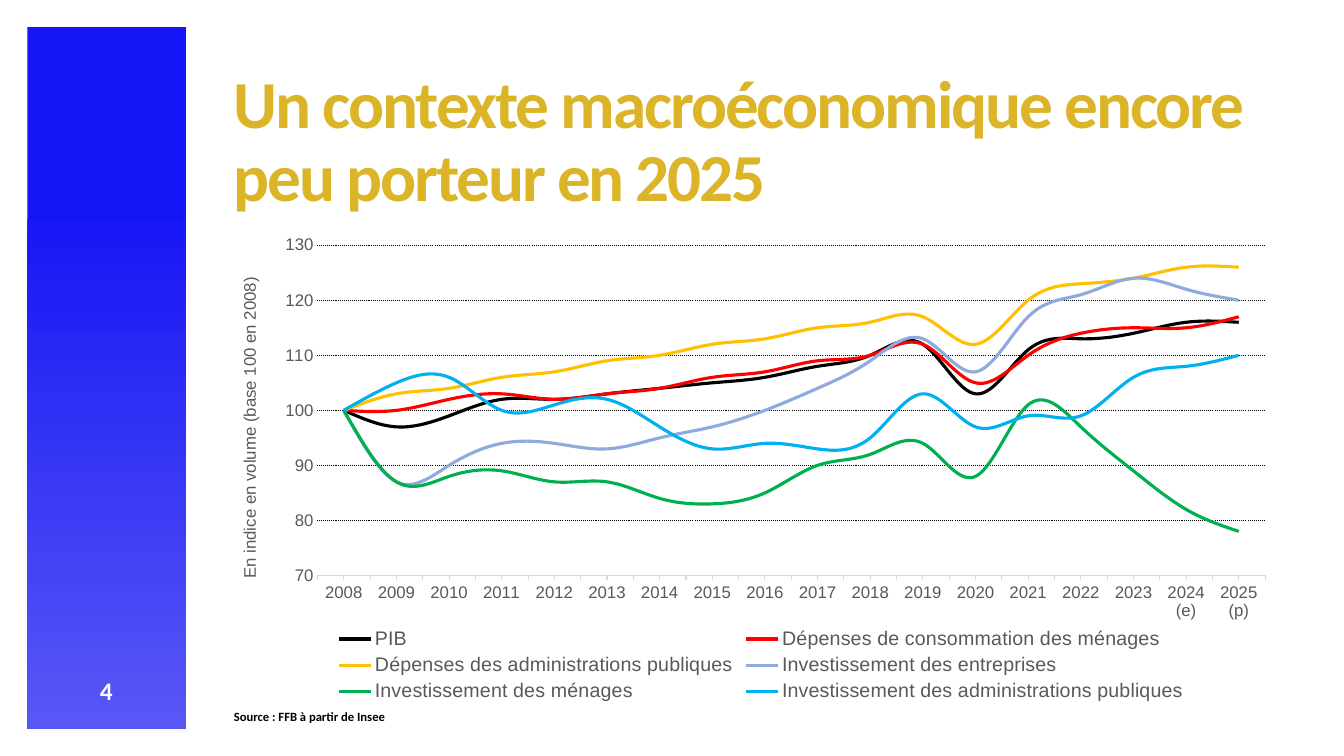
from pptx import Presentation
from pptx.chart.data import CategoryChartData
from pptx.dml.color import RGBColor
from pptx.enum.chart import XL_CHART_TYPE as CT, XL_LEGEND_POSITION as LP, XL_TICK_MARK as TM
from pptx.enum.dml import MSO_LINE
from pptx.enum.shapes import MSO_SHAPE
from pptx.enum.text import MSO_ANCHOR, PP_ALIGN
from pptx.oxml import parse_xml
from pptx.oxml.ns import nsdecls
from pptx.util import Pt

GREY = "595959"


def rgb(value):
    return RGBColor.from_string(value)


def set_font(font, size, color, name="Arial", bold=False):
    fmt = {"size": Pt(size), "name": name, "bold": bold}
    for key, value in fmt.items():
        setattr(font, key, value)
    font.color.rgb = rgb(color)


prs = Presentation()
prs.slide_width, prs.slide_height = Pt(960), Pt(540)
s = prs.slides.add_slide(prs.slide_layouts[6])

# Gradient side band
band = s.shapes.add_shape(MSO_SHAPE.RECTANGLE, Pt(19.5), Pt(19.5), Pt(113.5), Pt(501))
band.shadow.inherit = False
band.line.fill.background()
band.fill.gradient()
band.fill.gradient_angle = 270
for stop, (pos, color) in zip(band.fill.gradient_stops, [(0.25, "1615F5"), (1, "5757F5")]):
    stop.position = pos
    stop.color.rgb = rgb(color)

# Page number, title and source: text, box, size, colour, alignment, anchor, tracking
texts = [
    ("4", (19.5, 480, 113, 29), 18, "FFFFFF", PP_ALIGN.CENTER, MSO_ANCHOR.MIDDLE, 0),
    ("Un contexte macroéconomique encore peu porteur en 2025",
     (160, 47, 767.5, 60), 48, "DBB428", PP_ALIGN.LEFT, MSO_ANCHOR.TOP, -150),
    ("Source : FFB à partir de Insee",
     (160, 504, 646.5, 17.5), 9, "000000", PP_ALIGN.LEFT, MSO_ANCHOR.TOP, 0),
]
for text, box, size, color, align, anchor, tracking in texts:
    tf = s.shapes.add_textbox(*[Pt(v) for v in box]).text_frame
    tf.word_wrap = True
    tf.vertical_anchor = anchor
    p = tf.paragraphs[0]
    p.alignment = align
    p.line_spacing = 0.9
    r = p.add_run()
    r.text = text
    set_font(r.font, size, color, "Calibri", True)
    if tracking:
        r._r.get_or_add_rPr().set("spc", str(tracking))

# Chart data
series = [
    ("PIB", "000000",
     [100, 97, 99, 102, 102, 103, 104, 105, 106, 108, 110, 112, 103, 111, 113, 114, 116, 116]),
    ("Dépenses de consommation des ménages", "FF0000",
     [100, 100, 102, 103, 102, 103, 104, 106, 107, 109, 110, 112, 105, 110, 114, 115, 115, 117]),
    ("Dépenses des administrations publiques", "FFC000",
     [100, 103, 104, 106, 107, 109, 110, 112, 113, 115, 116, 117, 112, 120, 123, 124, 126, 126]),
    ("Investissement des entreprises", "8FAADC",
     [100, 87, 90, 94, 94, 93, 95, 97, 100, 104, 109, 113, 107, 117, 121, 124, 122, 120]),
    ("Investissement des ménages", "00B050",
     [100, 87, 88, 89, 87, 87, 84, 83, 85, 90, 92, 94, 88, 101, 97, 89, 82, 78]),
    ("Investissement des administrations publiques", "00B0F0",
     [100, 105, 106, 100, 101, 102, 97, 93, 94, 93, 95, 103, 97, 99, 99, 106, 108, 110]),
]
data = CategoryChartData(number_format="0")
data.categories = [str(year) for year in range(2008, 2024)] + ["2024 (e)", "2025 (p)"]
for name, _, values in series:
    data.add_series(name, values)

# Line chart
chart = s.shapes.add_chart(CT.LINE, Pt(160), Pt(157.5), Pt(767.5), Pt(347), data).chart
set_font(chart.font, 10, "000000", "Calibri")
chart.has_title = False
plot = chart.plots[0]
plot.vary_by_categories = False
for line, (_, color, _) in zip(plot.series, series):
    line.smooth = True
    line.format.line.width = Pt(2.25)
    line.format.line.color.rgb = rgb(color)

# Legend
chart.has_legend = True
chart.legend.position = LP.BOTTOM
chart.legend.include_in_layout = False
set_font(chart.legend.font, 14, GREY)

# Axes
cat, val = chart.category_axis, chart.value_axis
for axis, minor in ((cat, TM.OUTSIDE), (val, TM.NONE)):
    axis.major_tick_mark = TM.NONE
    axis.minor_tick_mark = minor
    set_font(axis.tick_labels.font, 12, GREY)
cat.format.line.width = Pt(0.75)
cat.format.line.color.rgb = rgb("D9D9D9")
val.format.line.fill.background()
for key, value in {"minimum_scale": 70, "maximum_scale": 130, "major_unit": 10}.items():
    setattr(val, key, value)
val.tick_labels.number_format = "0"
val.tick_labels.number_format_is_linked = False
grid = val.major_gridlines.format.line
grid.width = Pt(0.75)
grid.color.rgb = rgb("000000")
grid.dash_style = MSO_LINE.ROUND_DOT
r = val.axis_title.text_frame.paragraphs[0].add_run()
r.text = "En indice en volume (base 100 en 2008)"
set_font(r.font, 12, GREY)

# Inner plot area position
area = chart._chartSpace.chart.plotArea
for old in area.findall("{*}layout"):
    area.remove(old)
frame = "".join(f'<c:{tag} val="{v}"/>' for tag, v in [
    ("layoutTarget", "inner"), ("xMode", "edge"), ("yMode", "edge"),
    ("x", 0.087), ("y", 0.051), ("w", 0.882), ("h", 0.68)])
area.insert(0, parse_xml(
    f'<c:layout {nsdecls("c")}><c:manualLayout>{frame}</c:manualLayout></c:layout>'))

prs.save("out.pptx")
